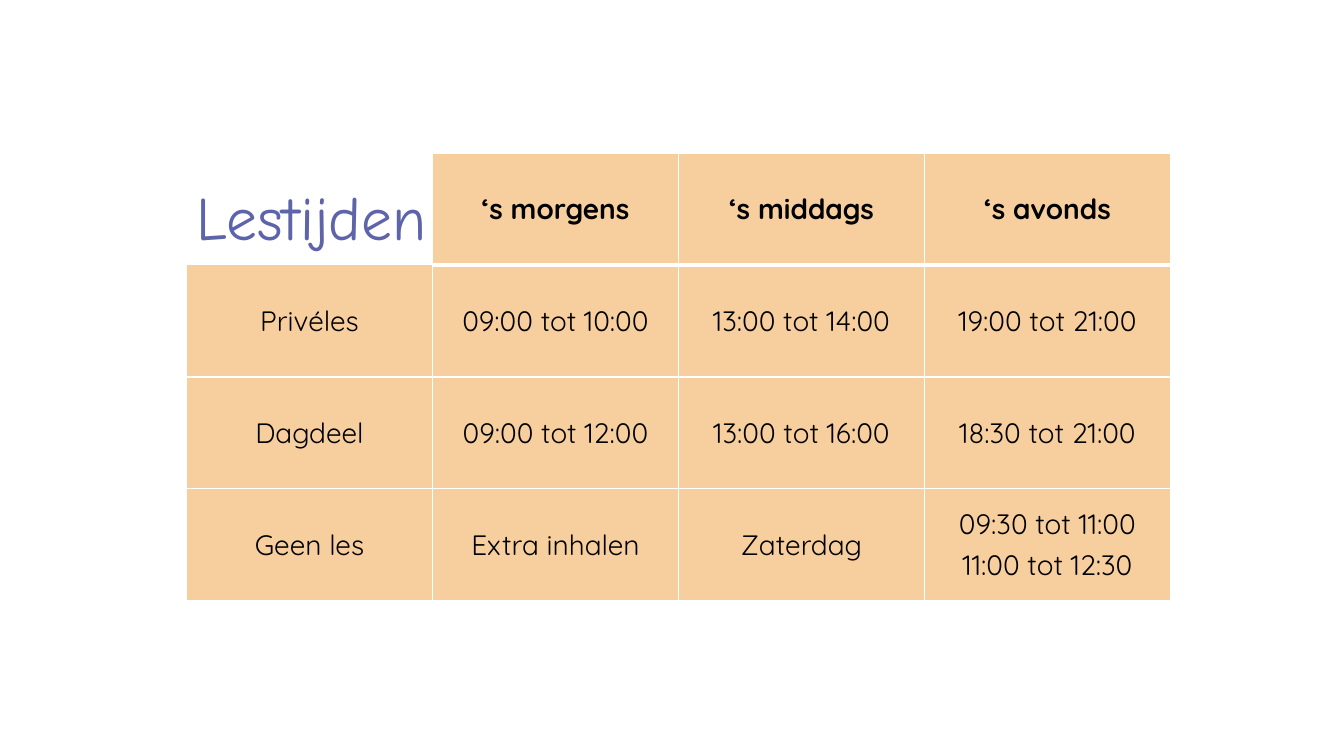
"""Builds a slide with a timetable of lesson times."""
import pptx
import pptx.dml.color
import pptx.enum.text
import pptx.oxml
import pptx.oxml.ns
import pptx.util

WIDTH, HEIGHT = 13.33, 7.5
LEFT, TOP, COLUMN, ROW = 1.85, 1.52, 2.44, 1.11
PEACH, WHITE, BLACK, VIOLET = "F7CF9E", "FFFFFF", "000000", "5D64AA"
MIDDLE = pptx.enum.text.MSO_ANCHOR.MIDDLE
LEFT_ALIGN = pptx.enum.text.PP_ALIGN.LEFT
CENTER = pptx.enum.text.PP_ALIGN.CENTER

LESSON_TIMES = [
    ["", "‘s morgens", "‘s middags", "‘s avonds"],
    ["Privéles", "09:00 tot 10:00", "13:00 tot 14:00", "19:00 tot 21:00"],
    ["Dagdeel", "09:00 tot 12:00", "13:00 tot 16:00", "18:30 tot 21:00"],
    ["Geen les", "Extra inhalen", "Zaterdag", "09:30 tot 11:00\n11:00 tot 12:30"],
]


def inches(value):
    return pptx.util.Inches(value)


def color(value):
    return pptx.dml.color.RGBColor.from_string(value)


def write(tf, text, font="Quicksand", size=20, fill=BLACK, bold=False, align=CENTER):
    for i, line in enumerate(text.split("\n")):
        p = tf.add_paragraph() if i else tf.paragraphs[0]
        p.alignment = align
        if i:
            p.space_before = pptx.util.Pt(size * 0.2)
        r = p.add_run()
        r.text = line
        r.font.name = font
        r.font.size = pptx.util.Pt(size)
        r.font.bold = bold
        r.font.color.rgb = color(fill)


def set_borders(cell, widths):
    tc_pr = cell._tc.get_or_add_tcPr()
    ns = pptx.oxml.ns.nsdecls("a")
    for i, (side, width) in enumerate(widths.items()):
        paint = f'<a:solidFill><a:srgbClr val="{WHITE}"/></a:solidFill>' if width else "<a:noFill/>"
        tc_pr.insert(i, pptx.oxml.parse_xml(
            f'<a:ln{side} {ns} w="{pptx.util.Pt(width)}">{paint}</a:ln{side}>'))


def add_timetable(s, rows):
    n_rows, n_cols = len(rows), len(rows[0])
    table = s.shapes.add_table(n_rows, n_cols, inches(LEFT), inches(TOP),
                               inches(n_cols * COLUMN), inches(n_rows * ROW)).table
    for column in table.columns:
        column.width = inches(COLUMN)
    for i, texts in enumerate(rows):
        table.rows[i].height = inches(ROW)
        for j, text in enumerate(texts):
            cell = table.cell(i, j)
            cell.vertical_anchor = MIDDLE
            if not text:
                cell.fill.background()
                set_borders(cell, dict.fromkeys("LRTB", 0))
                continue
            cell.fill.solid()
            cell.fill.fore_color.rgb = color(PEACH)
            above = 1
            if i == 1:
                above = 3 if j else 0
            set_borders(cell, {"L": 1, "R": 1, "T": above, "B": 1 if i else 3})
            write(cell.text_frame, text, bold=i == 0)


def add_title(s, text):
    sp = s.shapes.add_textbox(inches(LEFT), inches(TOP + 0.14), inches(2.65), inches(0.97))
    tf = sp.text_frame
    tf.word_wrap = True
    tf.vertical_anchor = MIDDLE
    write(tf, text, font="Comic Neue", size=44, fill=VIOLET, align=LEFT_ALIGN)


def main():
    prs = pptx.Presentation()
    prs.slide_width, prs.slide_height = inches(WIDTH), inches(HEIGHT)
    s = prs.slides.add_slide(prs.slide_layouts[6])
    add_timetable(s, LESSON_TIMES)
    add_title(s, "Lestijden")
    prs.save("out.pptx")


if __name__ == "__main__":
    main()
